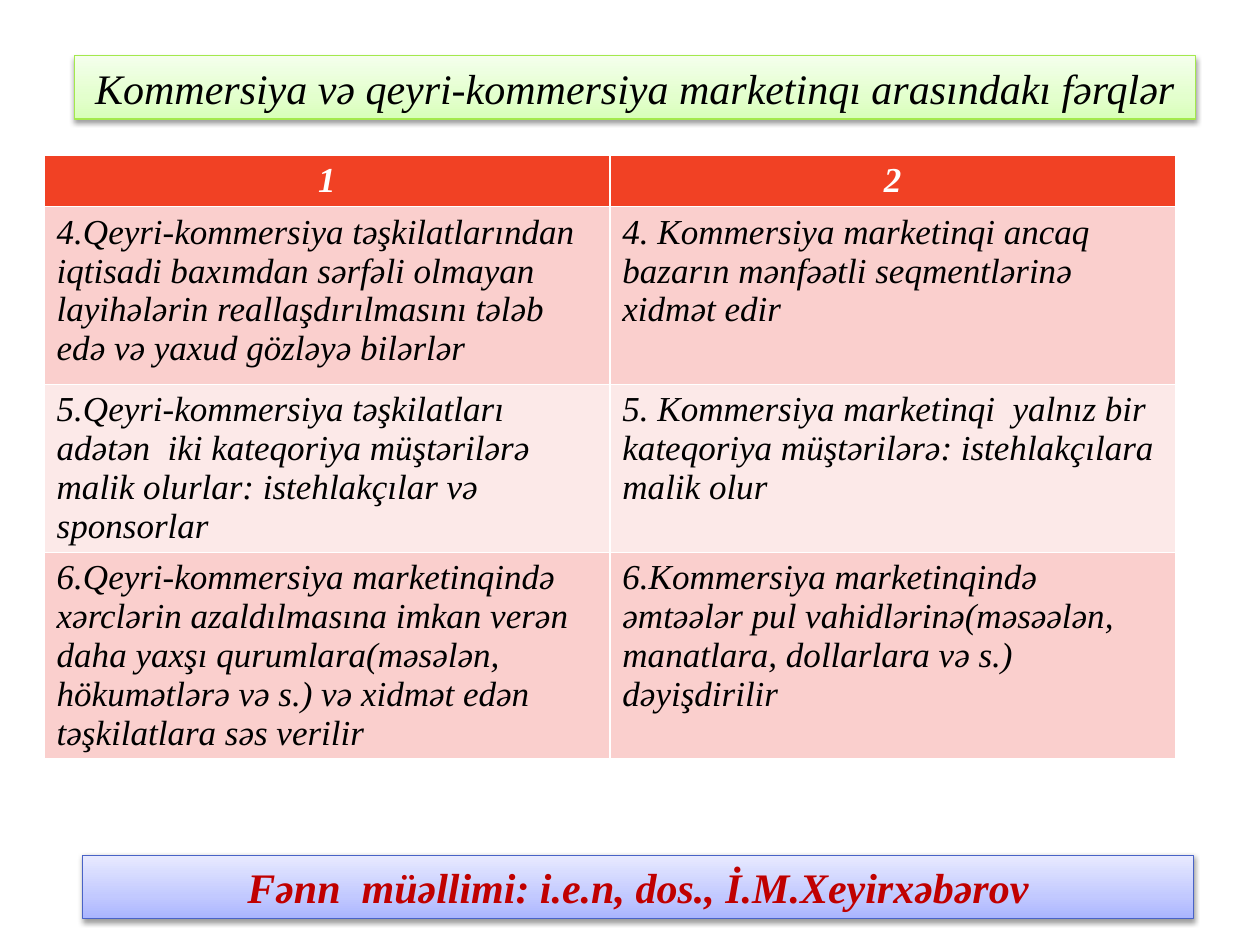
"""Build a slide comparing commercial and non-commercial marketing in a table."""
from lxml import etree
from pptx import Presentation
from pptx.dml.color import RGBColor
from pptx.enum.shapes import MSO_SHAPE
from pptx.enum.text import MSO_ANCHOR, PP_ALIGN
from pptx.oxml import parse_xml
from pptx.util import Pt

RECTANGLE = MSO_SHAPE.RECTANGLE
CENTER, LEFT = PP_ALIGN.CENTER, PP_ALIGN.LEFT
MIDDLE = MSO_ANCHOR.MIDDLE
FONT = "Times New Roman"
NAMESPACE = "http://schemas.openxmlformats.org/drawingml/2006/main"

BANNERS = [
    {"text": "Kommersiya və qeyri-kommersiya marketinqı arasındakı fərqlər",
     "place": (42.5, 31.7, 640.8, 36.4), "color": "000000", "bold": False,
     "line": "A4E94C", "stops": [(0, "D8FFB8"), (35, "E3FFCD"), (100, "F4FFEC")]},
    {"text": "Fənn  müəllimi: i.e.n, dos., İ.M.Xeyirxəbərov",
     "place": (47.2, 488.7, 635, 36.4), "color": "C00000", "bold": True,
     "line": "4963C7", "stops": [(0, "A9B4FF"), (35, "C2C9FF"), (100, "E8EAFF")]},
]

ROWS = [
    ("1", "2"),
    ("4.Qeyri-kommersiya təşkilatlarından iqtisadi baxımdan sərfəli olmayan "
     "layihələrin reallaşdırılmasını tələb edə və yaxud gözləyə bilərlər",
     "4. Kommersiya marketinqi ancaq bazarın mənfəətli seqmentlərinə xidmət edir"),
    ("5.Qeyri-kommersiya təşkilatları adətən  iki kateqoriya müştərilərə malik "
     "olurlar: istehlakçılar və sponsorlar",
     "5. Kommersiya marketinqi  yalnız bir kateqoriya müştərilərə: "
     "istehlakçılara malik olur"),
    ("6.Qeyri-kommersiya marketinqində xərclərin azaldılmasına imkan verən daha "
     "yaxşı qurumlara(məsələn, hökumətlərə və s.) və xidmət edən təşkilatlara "
     "səs verilir",
     "6.Kommersiya marketinqində əmtəələr pul vahidlərinə(məsəələn, manatlara, "
     "dollarlara və s.) dəyişdirilir"),
]
ROW_HEIGHTS = [29.5, 101.5, 95.8, 117.9]
ROW_FILLS = ["F14124", "FACFCD", "FCE9E8", "FACFCD"]
TABLE_LEFT, TABLE_TOP, COLUMN_WIDTH = 25.2, 88.6, 323.3


def rgb(color):
    return RGBColor.from_string(color)


def write(frame, text, size, color, bold, align):
    frame.word_wrap = True
    para = frame.paragraphs[0]
    para.text = text
    para.alignment = align
    font = para.font
    font.name, font.size = FONT, Pt(size)
    font.bold, font.italic = bold, True
    font.color.rgb = rgb(color)


def add_gradient(box, stops):
    box.fill.gradient()
    box.fill.gradient_angle = 90
    stop_list = box.element.spPr.find(f".//{{{NAMESPACE}}}gsLst")
    for stop in list(stop_list):
        stop_list.remove(stop)
    for position, color in stops:
        stop = etree.SubElement(stop_list, f"{{{NAMESPACE}}}gs", pos=str(position * 1000))
        etree.SubElement(stop, f"{{{NAMESPACE}}}srgbClr", val=color)


def add_shadow(box):
    box.shadow.inherit = False
    effects = box.element.spPr.find(f"{{{NAMESPACE}}}effectLst")
    effects.append(parse_xml(
        f'<a:outerShdw xmlns:a="{NAMESPACE}" blurRad="{Pt(3.1)}" dist="{Pt(1.6)}" '
        'dir="5400000" rotWithShape="0"><a:srgbClr val="000000">'
        '<a:alpha val="38000"/></a:srgbClr></a:outerShdw>'))


def add_banner(page, banner):
    box = page.shapes.add_shape(RECTANGLE, *map(Pt, banner["place"]))
    add_gradient(box, banner["stops"])
    box.line.color.rgb = rgb(banner["line"])
    box.line.width = Pt(0.75)
    add_shadow(box)
    box.text_frame.vertical_anchor = MIDDLE
    write(box.text_frame, banner["text"], 24, banner["color"], banner["bold"], CENTER)


def add_comparison(page):
    columns = len(ROWS[0])
    table = page.shapes.add_table(
        len(ROWS), columns, Pt(TABLE_LEFT), Pt(TABLE_TOP),
        Pt(COLUMN_WIDTH * columns), Pt(sum(ROW_HEIGHTS))).table
    for column in table.columns:
        column.width = Pt(COLUMN_WIDTH)
    for index, texts in enumerate(ROWS):
        table.rows[index].height = Pt(ROW_HEIGHTS[index])
        header = index == 0
        for cell, text in zip(table.rows[index].cells, texts):
            cell.fill.solid()
            cell.fill.fore_color.rgb = rgb(ROW_FILLS[index])
            write(cell.text_frame, text, 20, "FFFFFF" if header else "000000",
                  header, CENTER if header else LEFT)


def main():
    deck = Presentation()
    deck.slide_width, deck.slide_height = Pt(720), Pt(540)
    page = deck.slides.add_slide(deck.slide_layouts[6])
    add_comparison(page)
    for banner in BANNERS:
        add_banner(page, banner)
    deck.save("out.pptx")


if __name__ == "__main__":
    main()
